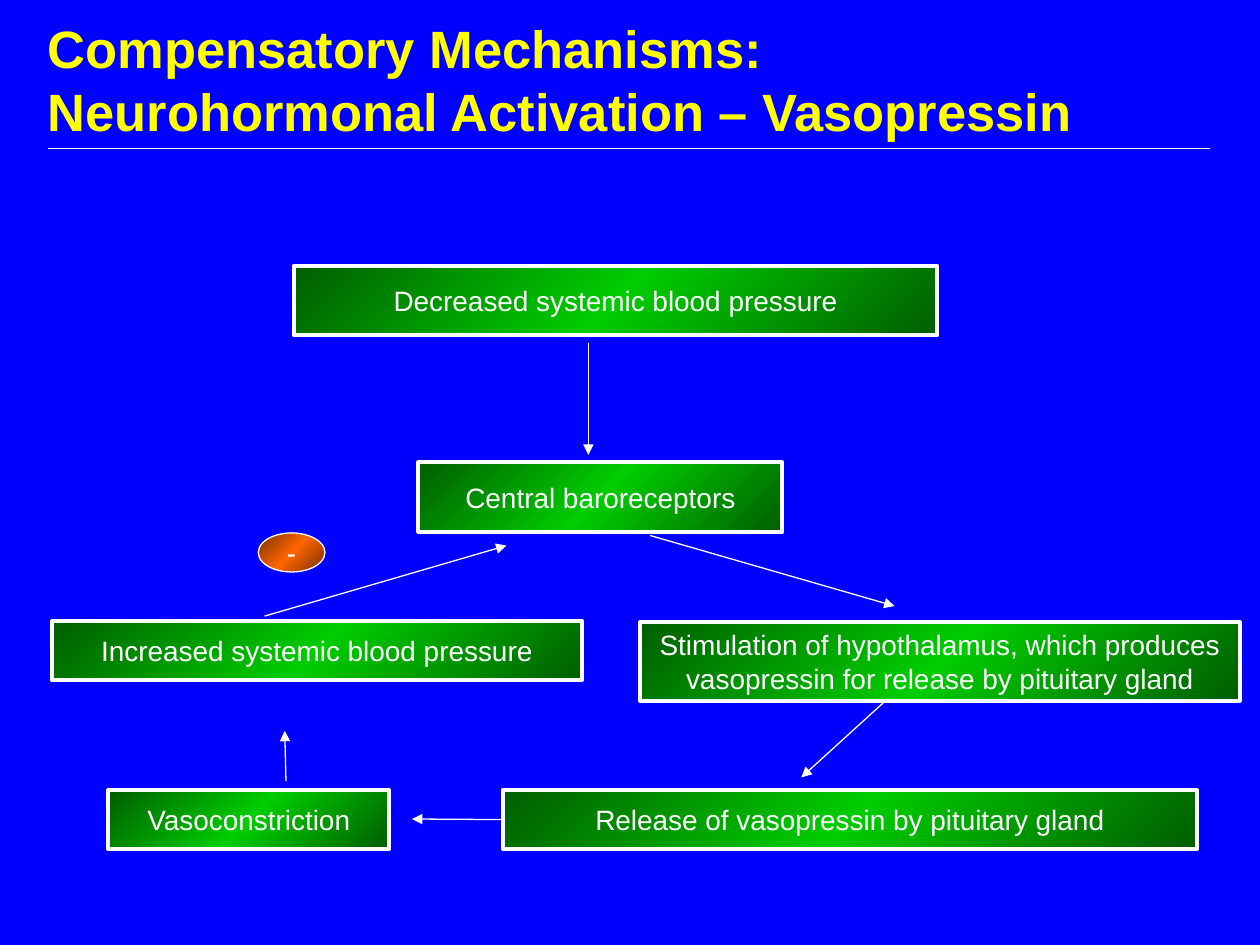
from copy import deepcopy

from lxml import etree
from pptx import Presentation
from pptx import util as u
from pptx.dml.color import RGBColor
from pptx.enum import shapes, text
from pptx.oxml.ns import qn

COLORS = {
    "background": "0000FF",
    "title": "FFFF00",
    "white": "FFFFFF",
    "green": "00CC00",
    "dark green": "005E00",
    "orange": "FF6600",
    "dark orange": "762F00",
}
FONT = "Arial"
TITLE = ["Compensatory Mechanisms:", "Neurohormonal Activation – Vasopressin"]
STEPS = {
    "decreased": (["Decreased systemic blood pressure"], 2.33, 2.11, 5.11, 0.55),
    "baroreceptors": (["Central baroreceptors"], 3.32, 3.67, 2.89, 0.55),
    "hypothalamus": (
        ["Stimulation of hypothalamus, which produces", "vasopressin for release by pituitary gland"],
        5.08, 4.94, 4.76, 0.62,
    ),
    "release": (["Release of vasopressin by pituitary gland"], 3.99, 6.27, 5.51, 0.47),
    "vasoconstriction": (["Vasoconstriction"], 0.86, 6.27, 2.23, 0.47),
    "increased": (["Increased systemic blood pressure"], 0.41, 4.93, 4.21, 0.47),
}
FEEDBACK_SIGN = (["-"], 2.05, 4.23, 0.53, 0.31)
ARROWS = [
    (4.67, 2.72, 4.67, 3.61),
    (5.16, 4.25, 7.1, 4.81),
    (7.03, 5.56, 6.36, 6.17),
    (2.27, 6.2, 2.26, 5.8),
    (2.1, 4.89, 4.02, 4.33),
]
RELEASE_ARROW = (3.99, 6.5, 3.27, 6.5)
TITLE_RULE = (0.38, 1.18, 9.6, 1.18)


def color(name):
    return RGBColor.from_string(COLORS[name])


def add_run(paragraph, words, size, color_name, bold=False):
    run = paragraph.add_run()
    run.text = words
    run.font.name = FONT
    run.font.size = u.Pt(size)
    run.font.bold = bold
    run.font.color.rgb = color(color_name)


def fill_gradient(shape, edge, middle):
    shape.fill.gradient()
    shape.fill.gradient_angle = 315
    stops = shape._element.spPr.find(".//" + qn("a:gsLst"))
    stops.insert(1, deepcopy(stops[0]))
    for stop, position, name in zip(shape.fill.gradient_stops, (0, 0.5, 1), (edge, middle, edge)):
        stop.position = position
        stop.color.rgb = color(name)


def add_node(slide, kind, node, edge, middle, line_width):
    lines, *place = node
    shape = slide.shapes.add_shape(kind, *map(u.Inches, place))
    shape.shadow.inherit = False
    fill_gradient(shape, edge, middle)
    shape.line.color.rgb = color("white")
    shape.line.width = u.Pt(line_width)
    frame = shape.text_frame
    frame.word_wrap = False
    frame.vertical_anchor = text.MSO_ANCHOR.MIDDLE
    for index, words in enumerate(lines):
        paragraph = frame.add_paragraph() if index else frame.paragraphs[0]
        paragraph.alignment = text.PP_ALIGN.CENTER
        add_run(paragraph, words, 16, "white")
    return shape


def add_line(slide, ends, arrow=True):
    line = slide.shapes.add_connector(shapes.MSO_CONNECTOR.STRAIGHT, *map(u.Inches, ends))
    line.line.color.rgb = color("white")
    line.line.width = u.Pt(0.75)
    if arrow:
        etree.SubElement(line.line._get_or_add_ln(), qn("a:tailEnd"), type="triangle")
    etree.SubElement(line._element.spPr, qn("a:effectLst"))
    return line


def add_title(slide):
    box = slide.shapes.add_textbox(*map(u.Inches, (0.28, 0, 9.32, 1.18)))
    frame = box.text_frame
    frame.word_wrap = True
    frame.vertical_anchor = text.MSO_ANCHOR.BOTTOM
    paragraph = frame.paragraphs[0]
    for index, words in enumerate(TITLE):
        if index:
            paragraph.add_line_break()
        add_run(paragraph, words, 30, "title", bold=True)


def main():
    presentation = Presentation()
    presentation.slide_width = u.Inches(10)
    presentation.slide_height = u.Inches(7.5)
    slide = presentation.slides.add_slide(presentation.slide_layouts[6])
    slide.background.fill.solid()
    slide.background.fill.fore_color.rgb = color("background")

    add_line(slide, TITLE_RULE, arrow=False)
    boxes = {
        name: add_node(slide, shapes.MSO_SHAPE.RECTANGLE, step, "dark green", "green", 2.25)
        for name, step in STEPS.items()
    }
    for ends in ARROWS:
        add_line(slide, ends)
    add_line(slide, RELEASE_ARROW).begin_connect(boxes["release"], 1)
    add_node(slide, shapes.MSO_SHAPE.OVAL, FEEDBACK_SIGN, "dark orange", "orange", 0.75)
    add_title(slide)
    presentation.save("out.pptx")


if __name__ == "__main__":
    main()
